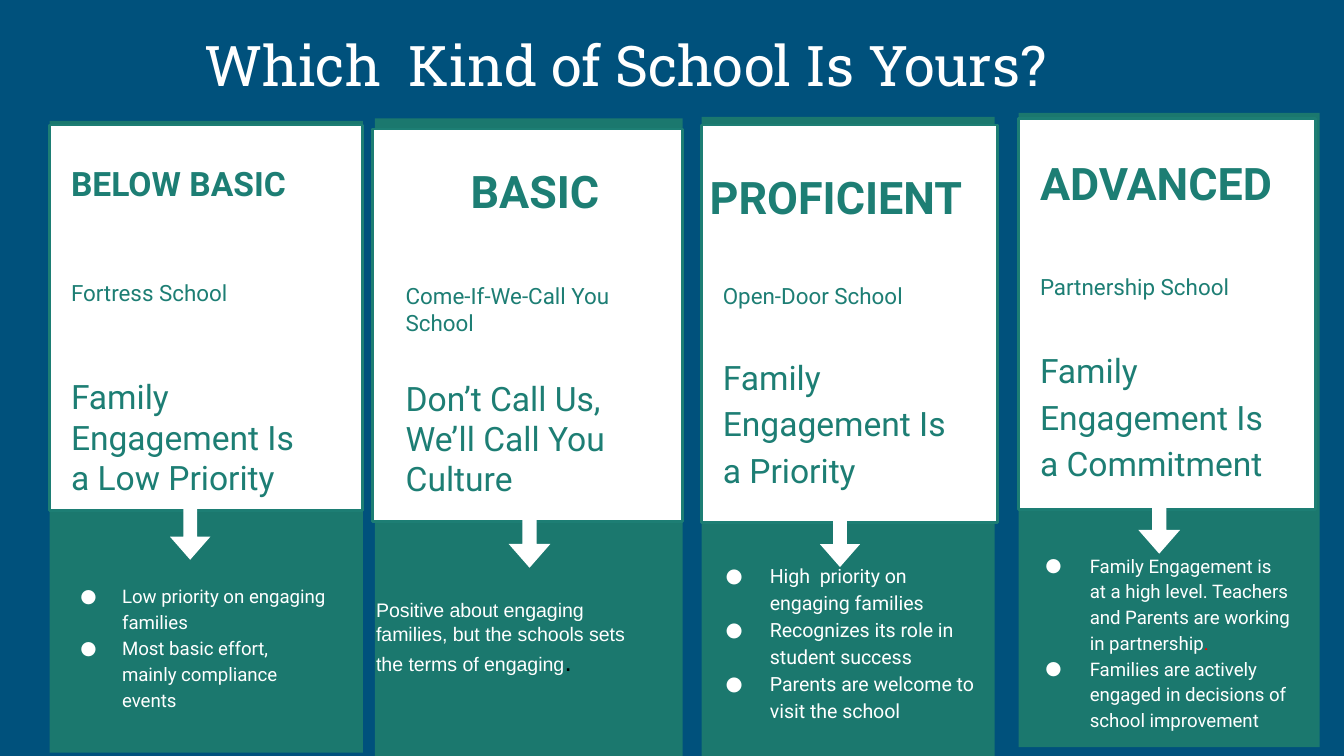
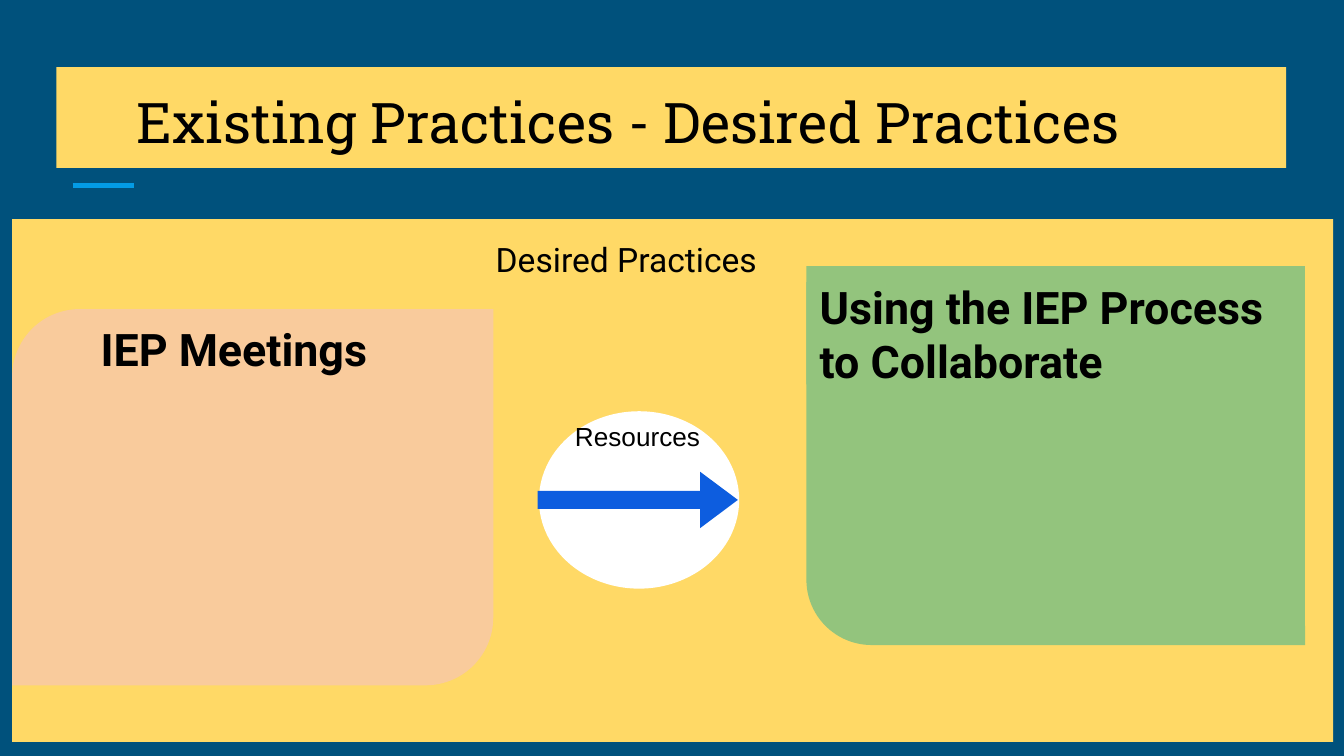
from dataclasses import dataclass

from lxml import etree
from pptx import Presentation
from pptx.dml.color import RGBColor
from pptx.enum.shapes import MSO_CONNECTOR, MSO_SHAPE
from pptx.enum.text import MSO_ANCHOR, PP_ALIGN
from pptx.oxml.ns import qn
from pptx.util import Inches, Pt

RECT = MSO_SHAPE.RECTANGLE
ARROW = MSO_SHAPE.RIGHT_ARROW
OVAL = MSO_SHAPE.OVAL
DIAGONAL = MSO_SHAPE.ROUND_2_DIAG_RECTANGLE
STRAIGHT = MSO_CONNECTOR.STRAIGHT
TOP = MSO_ANCHOR.TOP
BOTTOM = MSO_ANCHOR.BOTTOM
LEFT = PP_ALIGN.LEFT
CENTER = PP_ALIGN.CENTER

NAVY = RGBColor(0x00, 0x51, 0x7C)
GREEN = RGBColor(0x1B, 0x78, 0x6E)
TEAL = RGBColor(0x1D, 0x7E, 0x74)
WHITE = RGBColor(0xFF, 0xFF, 0xFF)
BLACK = RGBColor(0x00, 0x00, 0x00)
RED = RGBColor(0xFF, 0x00, 0x00)
YELLOW = RGBColor(0xFF, 0xD9, 0x66)
PEACH = RGBColor(0xF9, 0xCB, 0x9C)
LEAF = RGBColor(0x93, 0xC4, 0x7D)
SKY = RGBColor(0x03, 0x9B, 0xE5)
BLUE = RGBColor(0x0D, 0x5D, 0xDF)

BODY, SLAB, PLAIN = "Roboto", "Roboto Slab", "Arial"


def style(size, color, name=BODY, bold=False):
    return {"size": Pt(size), "name": name, "bold": bold, "color": color}


TITLE = style(30, WHITE, SLAB)
TITLE_DARK = style(30, BLACK, SLAB)
SCHOOL = style(12, TEAL)
MOTTO = style(18, TEAL)
TOPIC = style(24, BLACK, bold=True)


@dataclass
class Column:
    panel: tuple
    card: tuple
    heading: tuple
    school: tuple
    motto: tuple
    arrow: tuple
    words: tuple
    heading_size: int = 24
    heading_align: int = LEFT
    heading_indent: float = 0
    motto_spacing: float = 1.0
    traits: tuple = ()
    traits_box: tuple = ()
    traits_size: float = 10
    traits_top: float = 0.1
    traits_hang: float = 0.33


COLUMNS = [
    Column(
        (2.79, 0.88, 2.29, 4.79), (-0.02, 0.08, 2.31, 2.92),
        (0.13, 0.24, 2.05, 0.79), (0.13, 1.12, 2.05, 0.71),
        (0.13, 1.83, 2.05, 0.99), (0.92, 2.96, 0.46, 0.31),
        ("BASIC", "Come-If-We-Call You School",
         "Don’t Call Us, We’ll Call You Culture"),
        heading_align=CENTER, heading_indent=0.07),
    Column(
        (5.22, 0.87, 2.18, 4.78), (0, 0.06, 2.2, 2.96),
        (-0.09, 0.29, 2.18, 0.79), (0.06, 1.13, 1.95, 0.71),
        (0.06, 1.64, 1.95, 1.19), (0.8, 2.97, 0.46, 0.3),
        ("PROFICIENT", "Open-Door School", "Family Engagement Is a Priority"),
        heading_align=CENTER, motto_spacing=1.15,
        traits=(("High  priority on engaging families",),
                ("Recognizes its role in student success",),
                ("Parents are welcome to visit the school",)),
        traits_box=(-0.09, 3.02, 2.28, 1.67), traits_size=10.5,
        traits_top=0.28),
    Column(
        (7.58, 0.84, 2.24, 4.72), (0, 0.04, 2.21, 2.91),
        (0.06, 0.22, 2, 0.78), (0.06, 1.09, 2, 0.7),
        (0.06, 1.62, 2, 1.15), (0.82, 2.9, 0.45, 0.31),
        ("ADVANCED", "Partnership School",
         "Family Engagement Is a Commitment"),
        motto_spacing=1.15,
        traits=(("Family Engagement is  at a high level. Teachers and "
                 "Parents are working in partnership", "."),
                ("Families are actively engaged in decisions of school "
                 "improvement",)),
        traits_box=(-0.07, 2.99, 2.22, 1.65), traits_top=0.27),
    Column(
        (0.37, 0.9, 2.33, 4.7), (0, 0.03, 2.33, 2.87),
        (0.06, 0.21, 1.98, 0.78), (0.06, 1.08, 1.98, 0.7),
        (0.06, 1.8, 1.98, 1.02), (0.82, 2.89, 0.45, 0.3),
        ("BELOW BASIC", "Fortress School",
         "Family Engagement Is a Low Priority"),
        heading_size=18,
        traits=(("Low priority on engaging families",),
                ("Most basic effort, mainly compliance events",)),
        traits_box=(-0.06, 3.33, 2.22, 1.25), traits_hang=0.31),
]


def within(box, part):
    return box[0] + part[0], box[1] + part[1], part[2], part[3]


def inches(box):
    return [Inches(length) for length in box]


def add_block(shapes, kind, box, fill, line=None, adjust=(), rotation=0):
    block = shapes.add_shape(kind, *inches(box))
    block.shadow.inherit = False
    block.fill.solid()
    block.fill.fore_color.rgb = fill
    if line is None:
        block.line.fill.background()
    else:
        block.line.color.rgb = line
        block.line.width = Pt(1.5)
    for index, value in enumerate(adjust):
        block.adjustments[index] = value
    block.rotation = rotation
    return block


def add_bullet(paragraph, color):
    properties = paragraph._p.get_or_add_pPr()
    tint = etree.SubElement(properties, qn("a:buClr"))
    etree.SubElement(tint, qn("a:srgbClr"), val=str(color))
    etree.SubElement(properties, qn("a:buFont"), typeface=BODY)
    etree.SubElement(properties, qn("a:buChar"), char="●")


def write(block, paragraphs, anchor=TOP, align=LEFT, spacing=None, indent=0,
          hang=0, top=0.1, bottom=0.1):
    frame = block.text_frame
    margins = {"margin_left": 0.1, "margin_right": 0.1,
               "margin_top": top, "margin_bottom": bottom}
    for side, length in margins.items():
        setattr(frame, side, Inches(length))
    frame.word_wrap = True
    frame.vertical_anchor = anchor
    for number, runs in enumerate(paragraphs):
        paragraph = frame.add_paragraph() if number else frame.paragraphs[0]
        paragraph.alignment = align
        if spacing:
            paragraph.line_spacing = spacing
        properties = paragraph._p.get_or_add_pPr()
        properties.set("marL", str(Inches(indent)))
        properties.set("indent", str(-Inches(hang)))
        if hang:
            add_bullet(paragraph, runs[0][1]["color"])
        for words, look in runs:
            run = paragraph.add_run()
            run.text = words
            for attribute, value in look.items():
                if attribute == "color":
                    run.font.color.rgb = value
                else:
                    setattr(run.font, attribute, value)


def add_text(shapes, box, words, look, **layout):
    write(shapes.add_textbox(*inches(box)), [[(words, look)]], **layout)


def add_slide(deck):
    slide = deck.slides.add_slide(deck.slide_layouts[6])
    slide.background.fill.solid()
    slide.background.fill.fore_color.rgb = NAVY
    return slide


def add_title(slide, box, words, look, indent, fill=None):
    title = slide.shapes.add_textbox(*inches(box))
    if fill is not None:
        title.fill.solid()
        title.fill.fore_color.rgb = fill
    write(title, [[(words, look)]], anchor=BOTTOM, indent=indent)


def add_column(slide, column):
    shapes = slide.shapes.add_group_shape().shapes
    panel = column.panel
    heading, school, motto = column.words
    add_block(shapes, RECT, panel, GREEN)
    add_block(shapes, RECT, within(panel, column.card), WHITE, TEAL)
    add_text(shapes, within(panel, column.school), school, SCHOOL)
    add_text(shapes, within(panel, column.motto), motto, MOTTO,
             spacing=column.motto_spacing)
    add_text(shapes, within(panel, column.heading), heading,
             style(column.heading_size, TEAL, bold=True),
             align=column.heading_align, indent=column.heading_indent)
    add_block(shapes, ARROW, within(panel, column.arrow), WHITE,
              adjust=(0.34, 0.57), rotation=90)
    if column.traits:
        looks = [style(column.traits_size, color) for color in (WHITE, RED)]
        traits = shapes.add_textbox(*inches(within(panel, column.traits_box)))
        write(traits, [list(zip(trait, looks)) for trait in column.traits],
              spacing=1.15, indent=0.5, hang=column.traits_hang,
              top=column.traits_top)


def add_basic_note(slide, box):
    note = slide.shapes.add_textbox(*inches(box))
    write(note, [[("Positive about engaging families, but the schools sets "
                   "the terms of engaging", style(10.5, WHITE, PLAIN)),
                  (".", style(14, BLACK, PLAIN))]], top=0.05, bottom=0.05)


def add_accent(slide, left, top, width):
    accent = slide.shapes.add_connector(
        STRAIGHT, *inches((left, top, left + width, top)))
    accent.line.color.rgb = SKY
    accent.line.width = Pt(3)
    etree.SubElement(accent._element.spPr, qn("a:effectLst"))


def add_existing(slide, box):
    shapes = slide.shapes.add_group_shape().shapes
    add_block(shapes, DIAGONAL, box, PEACH, adjust=(0.18, 0))
    add_text(shapes, within(box, (0.14, -0.4, 3.43, 1.06)), "IEP Meetings",
             TOPIC, indent=0.42, top=0.5, bottom=0)
    shapes[-1].text_frame.margin_top = Inches(0.59)


def add_desired(slide, box):
    shapes = slide.shapes.add_group_shape().shapes
    add_block(shapes, DIAGONAL, box, LEAF, adjust=(0, 0.18))
    header = add_block(shapes, RECT, within(box, (0, -0.12, box[2], 0.88)),
                       LEAF)
    write(header, [[("Using the IEP Process to Collaborate", TOPIC)]])


def add_resources(slide, box):
    shapes = slide.shapes.add_group_shape().shapes
    add_block(shapes, OVAL, box, WHITE)
    add_block(shapes, ARROW, within(box, (-0.01, 0.45, box[2], 0.42)), BLUE,
              adjust=(0.32, 0.67))
    add_text(slide.shapes, within(box, (-0.04, -0.03, 1.73, 0.42)),
             "Resources", style(14, BLACK, PLAIN), indent=0.21)


def build_school_kinds(deck):
    slide = add_slide(deck)
    add_title(slide, (0.42, 0.08, 9.15, 0.75),
              "Which  Kind of School Is Yours?", TITLE, indent=1)
    for column in COLUMNS:
        add_column(slide, column)
    add_basic_note(slide, (2.7, 4.4, 2.18, 0.69))


def build_practices(deck):
    slide = add_slide(deck)
    add_accent(slide, 0.54, 1.38, 0.46)
    add_title(slide, (0.42, 0.5, 9.15, 0.75),
              "Existing Practices - Desired Practices", TITLE_DARK,
              indent=0.5, fill=YELLOW)
    board = add_block(slide.shapes, RECT, (0.09, 1.63, 9.83, 3.89), YELLOW)
    write(board, [[("Desired Practices", style(18, BLACK))]],
          spacing=1.15, indent=3.5)
    add_existing(slide, (0.09, 2.3, 3.58, 2.8))
    add_desired(slide, (6, 2.1, 3.71, 2.7))
    add_resources(slide, (4.01, 3.06, 1.49, 1.32))


def main():
    deck = Presentation()
    deck.slide_width = Inches(10)
    deck.slide_height = Inches(10) * 9 // 16
    build_school_kinds(deck)
    build_practices(deck)
    deck.save("out.pptx")


if __name__ == "__main__":
    main()
